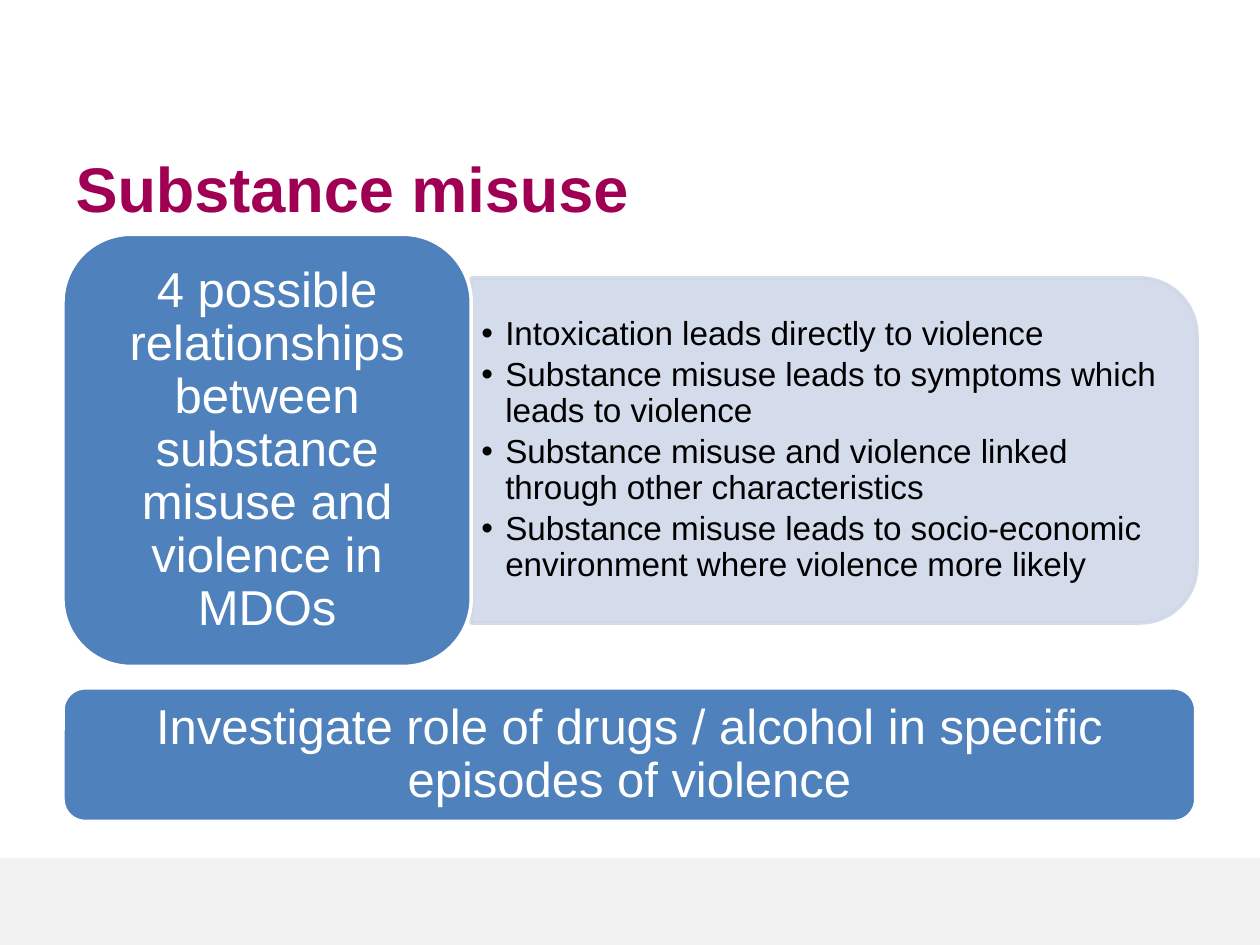
"""Build the substance misuse slide: a topic box with its list, and an action box."""
from lxml.etree import SubElement
from pptx import Presentation
from pptx.dml.color import RGBColor
from pptx.enum.shapes import MSO_SHAPE as Shape
from pptx.enum.text import MSO_ANCHOR as Anchor, MSO_AUTO_SIZE as AutoSize, PP_ALIGN as Align
from pptx.oxml.ns import qn
from pptx.util import Inches, Pt

TITLE = "Substance misuse"
TOPIC = "4 possible relationships between substance misuse and violence in MDOs"
RELATIONSHIPS = [
    "Intoxication leads directly to violence",
    "Substance misuse leads to symptoms which leads to violence",
    "Substance misuse and violence linked through other characteristics",
    "Substance misuse leads to socio-economic environment where violence more likely",
]
ACTION = "Investigate role of drugs / alcohol in specific episodes of violence"

THEME = {
    "font": "Arial",
    "title": "A00054", "box": "4F81BD", "panel": "D0D8E8", "footer": "F2F2F2",
    "light": "FFFFFF", "dark": "000000",
    "title_size": 36, "box_size": 28, "list_size": 19,
    "line_width": 2, "panel_alpha": 90,
}

SLIDE_WIDTH, SLIDE_HEIGHT = 10, 7.5
FOOTER_TOP = 6.81
LEFT, WIDTH = 0.5, 8.99
TOPIC_TOP, TOPIC_WIDTH, TOPIC_HEIGHT = 1.86, 3.24, 3.43
ACTION_TOP, ACTION_HEIGHT = 5.46, 1.06
PANEL_LEFT = LEFT + TOPIC_WIDTH
PANEL_WIDTH, PANEL_HEIGHT = 5.76, 2.74
LIST_WIDTH, LIST_HEIGHT = 5.63, 2.47
MIDDLE = TOPIC_TOP + TOPIC_HEIGHT / 2
HANGING = 0.19


def set_values(target, values):
    for name, value in values.items():
        setattr(target, name, value)


def place(shape, left, top, width, height):
    names = ("left", "top", "width", "height")
    set_values(shape, dict(zip(names, map(Inches, (left, top, width, height)))))


def format_frame(frame, horizontal, vertical):
    set_values(frame, {
        "word_wrap": True, "auto_size": AutoSize.NONE, "vertical_anchor": Anchor.MIDDLE,
        "margin_left": Inches(horizontal), "margin_right": Inches(horizontal),
        "margin_top": Inches(vertical), "margin_bottom": Inches(vertical),
    })


def format_paragraph(paragraph, text, size, color, bold=False, **layout):
    paragraph.text = text
    set_values(paragraph, {"space_before": Pt(0), **layout})
    for font in (paragraph.font, paragraph.runs[0].font):
        set_values(font, {"name": THEME["font"], "size": Pt(size), "bold": bold})
        font.color.rgb = RGBColor.from_string(color)


def add_shape(slide, kind, position, fill, line=None):
    shape = slide.shapes.add_shape(kind, *map(Inches, position))
    shape.shadow.inherit = False
    shape.fill.solid()
    shape.fill.fore_color.rgb = RGBColor.from_string(fill)
    if line:
        shape.line.color.rgb = RGBColor.from_string(line)
        shape.line.width = Pt(THEME["line_width"])
    else:
        shape.line.fill.background()
    return shape


def add_box(slide, text, position):
    box = add_shape(slide, Shape.ROUNDED_RECTANGLE, position, THEME["box"], THEME["light"])
    format_frame(box.text_frame, 0.12, 0.06)
    format_paragraph(box.text_frame.paragraphs[0], text, THEME["box_size"], THEME["light"],
                     alignment=Align.CENTER, line_spacing=0.9)


def add_panel(slide):
    center = PANEL_LEFT + PANEL_WIDTH / 2
    position = (center - PANEL_HEIGHT / 2, MIDDLE - PANEL_WIDTH / 2, PANEL_HEIGHT, PANEL_WIDTH)
    panel = add_shape(slide, Shape.ROUND_2_SAME_RECTANGLE, position, THEME["panel"], THEME["panel"])
    panel.rotation = 90
    for color in panel.element.spPr.iter(qn("a:srgbClr")):
        SubElement(color, qn("a:alpha"), val=str(THEME["panel_alpha"] * 1000))
    return panel


def fill_list(body):
    place(body, PANEL_LEFT, MIDDLE - LIST_HEIGHT / 2, LIST_WIDTH, LIST_HEIGHT)
    frame = body.text_frame
    format_frame(frame, 0.08, 0.04)
    for index, text in enumerate(RELATIONSHIPS):
        paragraph = frame.add_paragraph() if index else frame.paragraphs[0]
        paragraph.level = 1
        properties = paragraph._p.get_or_add_pPr()
        properties.set("marL", str(Inches(HANGING)))
        properties.set("indent", str(-Inches(HANGING)))
        SubElement(properties, qn("a:buFont"), typeface=THEME["font"])
        SubElement(properties, qn("a:buChar"), char="•")
        format_paragraph(paragraph, text, THEME["list_size"], THEME["dark"], line_spacing=0.9,
                         space_after=Pt(THEME["list_size"] * 0.15), alignment=Align.LEFT)


def main():
    presentation = Presentation()
    presentation.slide_width = Inches(SLIDE_WIDTH)
    presentation.slide_height = Inches(SLIDE_HEIGHT)
    slide = presentation.slides.add_slide(presentation.slide_layouts[1])
    title, body = slide.placeholders

    footer = add_shape(slide, Shape.RECTANGLE,
                       (0, FOOTER_TOP, SLIDE_WIDTH, SLIDE_HEIGHT - FOOTER_TOP), THEME["footer"])
    title.element.addprevious(footer.element)
    place(title, LEFT, 1.12, 8.5, 0.74)
    format_frame(title.text_frame, 0.1, 0.05)
    format_paragraph(title.text_frame.paragraphs[0], TITLE, THEME["title_size"], THEME["title"],
                     bold=True, alignment=Align.LEFT)

    body.element.addprevious(add_panel(slide).element)
    fill_list(body)
    add_box(slide, TOPIC, (LEFT, TOPIC_TOP, TOPIC_WIDTH, TOPIC_HEIGHT))
    add_box(slide, ACTION, (LEFT, ACTION_TOP, WIDTH, ACTION_HEIGHT))
    presentation.save("out.pptx")


if __name__ == "__main__":
    main()
